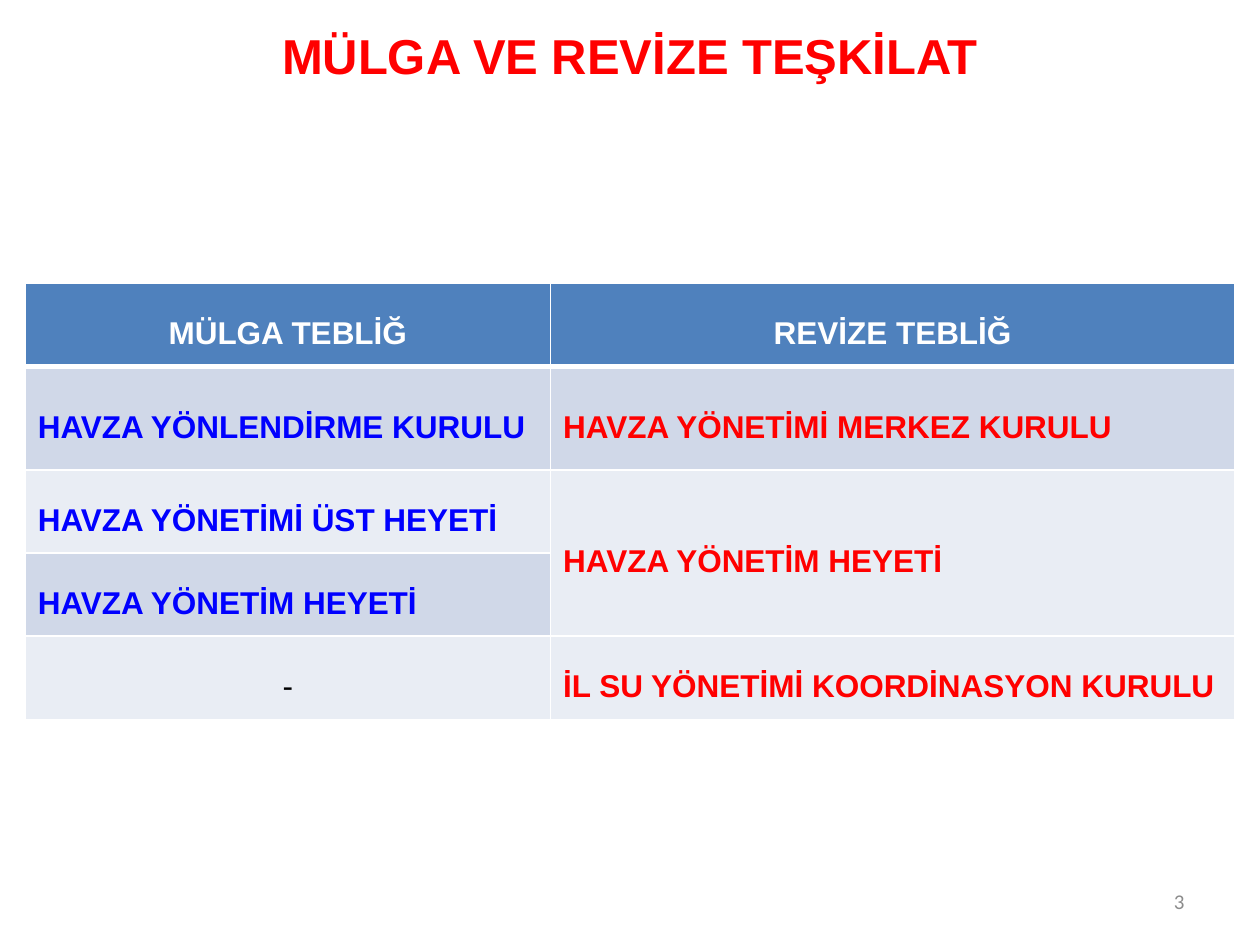
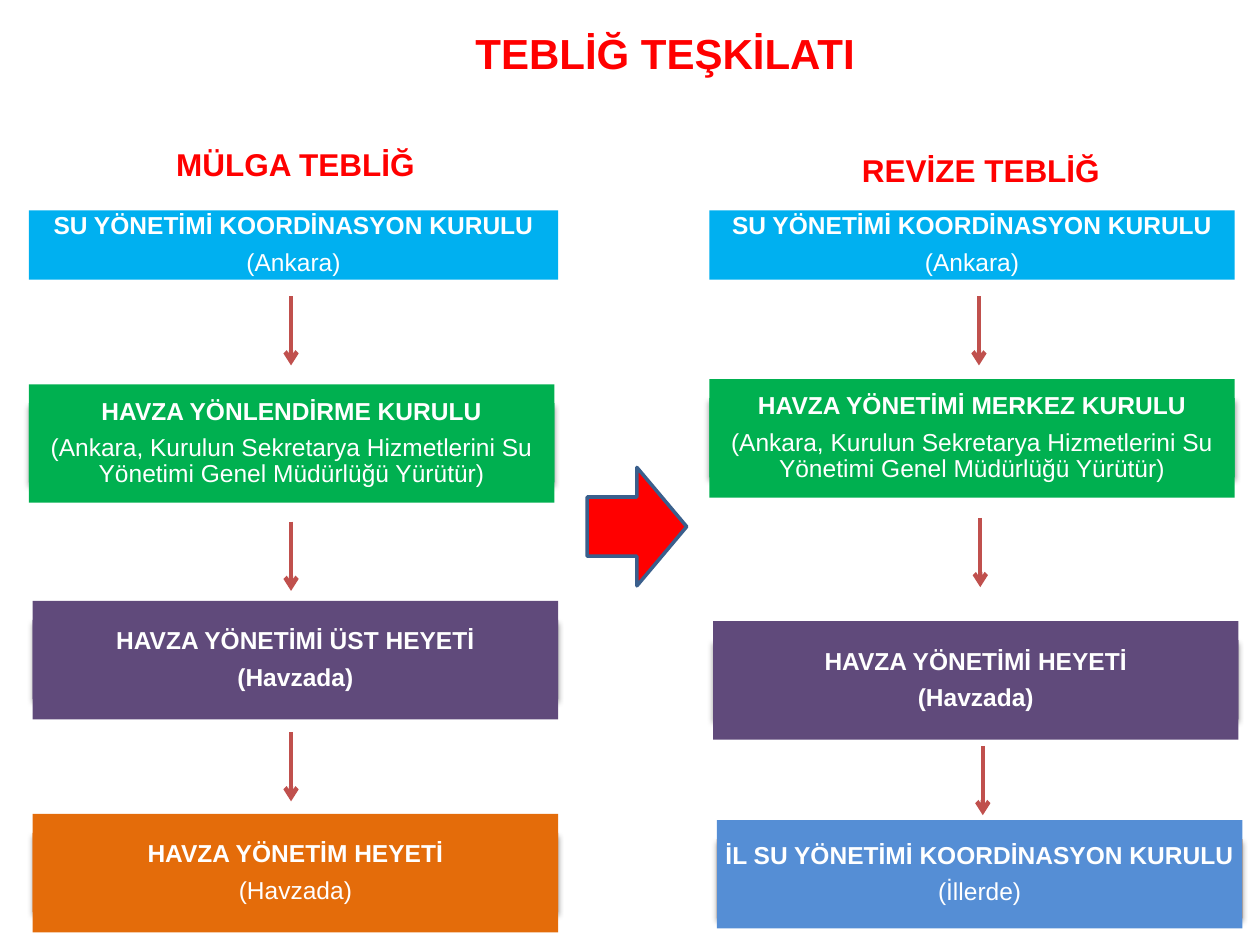
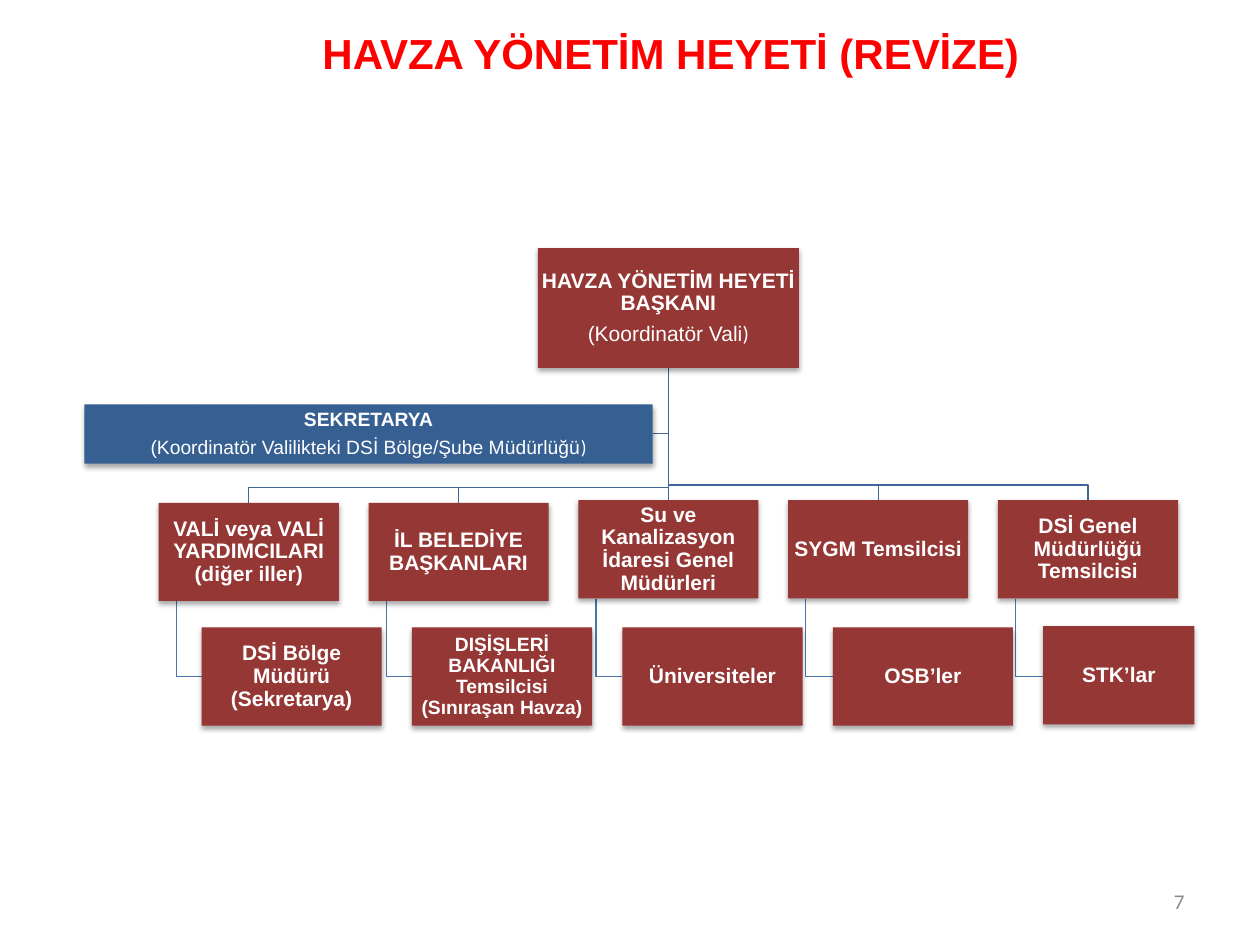
from lxml import etree
from pptx import Presentation
from pptx.dml.color import RGBColor
from pptx.enum.shapes import MSO_CONNECTOR, MSO_SHAPE
from pptx.enum.text import MSO_ANCHOR, PP_ALIGN
from pptx.oxml import parse_xml
from pptx.oxml.ns import nsdecls, qn
from pptx.util import Inches, Pt

RECT, ARROW = MSO_SHAPE.RECTANGLE, MSO_SHAPE.RIGHT_ARROW
LINE = MSO_CONNECTOR.STRAIGHT
MID = MSO_ANCHOR.MIDDLE
LEFT, CENTER, RIGHT = PP_ALIGN.LEFT, PP_ALIGN.CENTER, PP_ALIGN.RIGHT

HEX = {
    "red": "FF0000", "blue": "0000FF", "white": "FFFFFF", "black": "000000",
    "gray": "8C8C8C", "head": "4F81BD", "dark": "D0D8E8", "light": "E9EDF4",
    "sky": "00B0F0", "green": "00B050", "violet": "604A7B", "orange": "E46C0A",
    "azure": "558ED5", "rust": "C0504D", "edge": "3A5F8C", "brick": "953735",
    "navy": "376092", "trunk": "3F6797", "twig": "4875AC",
}
RGB = {name: RGBColor.from_string(code) for name, code in HEX.items()}
SHADE = (
    f'<a:effectLst {nsdecls("a")}><a:outerShdw blurRad="{Pt(3.1)}" dist="{Pt(1.8)}" '
    'dir="5400000" rotWithShape="0"><a:srgbClr val="000000"><a:alpha val="35000"/>'
    '</a:srgbClr></a:outerShdw></a:effectLst>'
)

# The grid has 10 columns and 7.5 rows, one inch each
deck = Presentation()
deck.slide_width, deck.slide_height = Inches(10), Inches(7.5)
blank = deck.slide_layouts[6]


def label(slide, at, words, size, hue="red", face="Arial", side=CENTER, wrap=True):
    frame = slide.shapes.add_textbox(*map(Inches, at)).text_frame
    frame.word_wrap, frame.vertical_anchor = wrap, MID
    para = frame.paragraphs[0]
    para.text, para.alignment = words, side
    para.font.size, para.font.name = Pt(size), face
    para.font.bold, para.font.color.rgb = hue == "red", RGB[hue]


def block(slide, at, hue, lines, size, shade=False):
    box = slide.shapes.add_shape(RECT, *map(Inches, at))
    box.fill.solid()
    box.fill.fore_color.rgb = RGB[hue]
    box.line.fill.background()
    if shade:
        box._element.spPr.append(parse_xml(SHADE))
    else:
        box.shadow.inherit = False
    frame = box.text_frame
    frame.word_wrap, frame.vertical_anchor = True, MID
    frame.margin_left = frame.margin_right = Inches(0.01)
    frame.margin_top = frame.margin_bottom = Inches(0.01)
    for i, (words, bold) in enumerate(lines):
        para = frame.add_paragraph() if i else frame.paragraphs[0]
        para.text, para.alignment = words, CENTER
        para.line_spacing, para.space_after = 0.9, Pt(round(0.4 * size, 1))
        para.font.size, para.font.name = Pt(size), "Arial"
        para.font.bold, para.font.color.rgb = bold, RGB["white"]
    return frame


# Slide 1: table of old and new bodies
old = deck.slides.add_slide(blank)
label(old, (0.97, 0, 8.06, 0.87), "MÜLGA VE REVİZE TEŞKİLAT", 28)
rows = [
    ("head", "MÜLGA TEBLİĞ", "REVİZE TEBLİĞ"),
    ("dark", "HAVZA YÖNLENDİRME KURULU", "HAVZA YÖNETİMİ MERKEZ KURULU"),
    ("light", "HAVZA YÖNETİMİ ÜST HEYETİ", "HAVZA YÖNETİM HEYETİ"),
    ("dark", "HAVZA YÖNETİM HEYETİ", ""),
    ("light", "-", "İL SU YÖNETİMİ KOORDİNASYON KURULU"),
]
grid = old.shapes.add_table(5, 2, *map(Inches, (0.2, 2.25, 9.6, 3.46))).table
for col, wide in zip(grid.columns, (4.17, 5.43)):
    col.width = Inches(wide)
for r, (fill, *texts) in enumerate(rows):
    grid.rows[r].height = Inches(0.82 if r == 1 else 0.66)
    for c, words in enumerate(texts):
        cell = grid.cell(r, c)
        props = cell._tc.get_or_add_tcPr()
        for edge in "LRTB":
            thick = 3 if (r, edge) in ((0, "B"), (1, "T")) else 1
            rule = etree.SubElement(props, qn(f"a:ln{edge}"), w=str(Pt(thick)))
            paint = etree.SubElement(rule, qn("a:solidFill"))
            etree.SubElement(paint, qn("a:srgbClr"), val=HEX["white"])
        cell.fill.solid()
        cell.fill.fore_color.rgb = RGB[fill]
        cell.vertical_anchor = MID
        if not words:
            continue
        para = cell.text_frame.paragraphs[0]
        para.text, para.line_spacing = words, 1.5
        para.alignment = CENTER if r == 0 or words == "-" else LEFT
        para.font.size, para.font.name = Pt(18), "Arial"
        para.font.bold = words != "-"
        hue = "white" if r == 0 else "black" if words == "-" else ("blue", "red")[c]
        para.font.color.rgb = RGB[hue]
grid.cell(2, 1).merge(grid.cell(3, 1))

# Slide 2: two chains of bodies side by side
flow = deck.slides.add_slide(blank)
label(flow, (3.66, 0.17, 3.24, 0.5), "TEBLİĞ TEŞKİLATI", 24, wrap=False)
label(flow, (1.29, 1.1, 2.11, 0.4), "MÜLGA TEBLİĞ", 18, wrap=False)
label(flow, (6.73, 1.15, 2.11, 0.4), "REVİZE TEBLİĞ", 18, wrap=False)
top = "SU YÖNETİMİ KOORDİNASYON KURULU"
desk = "(Ankara, Kurulun Sekretarya Hizmetlerini Su Yönetimi Genel Müdürlüğü Yürütür)"
steps = [
    (0.23, 1.67, 4.2, 0.55, "sky", top, "(Ankara)"),
    (0.23, 3.05, 4.17, 0.94, "green", "HAVZA YÖNLENDİRME KURULU", desk),
    (0.26, 4.77, 4.17, 0.94, "violet", "HAVZA YÖNETİMİ ÜST HEYETİ", "(Havzada)"),
    (0.26, 6.46, 4.17, 0.94, "orange", "HAVZA YÖNETİM HEYETİ", "(Havzada)"),
    (5.63, 1.67, 4.17, 0.55, "sky", top, "(Ankara)"),
    (5.63, 3.01, 4.17, 0.94, "green", "HAVZA YÖNETİMİ MERKEZ KURULU", desk),
    (5.66, 4.93, 4.17, 0.94, "violet", "HAVZA YÖNETİMİ HEYETİ", "(Havzada)"),
    (5.69, 6.51, 4.17, 0.86, "azure", top.replace("SU", "İL SU", 1), "(İllerde)"),
]
for x, y, w, h, hue, name, note in steps:
    if hue != "sky":
        back = "orange" if hue == "azure" else hue
        block(flow, (x, y + 0.15, w, 0.63), back, [], 14, True)
    block(flow, (x, y, w, h), hue, [(name, True), (note, hue == "violet")], 14)

for x, y in ((2.31, 2.35), (2.31, 4.14), (2.31, 5.81),
             (7.77, 2.35), (7.78, 4.11), (7.8, 5.92)):
    down = flow.shapes.add_connector(LINE, *map(Inches, (x, y, x, y + 0.55)))
    down.line.color.rgb, down.line.width = RGB["rust"], Pt(2.5)
    etree.SubElement(down.line._get_or_add_ln(), qn("a:tailEnd"), type="arrow")
    etree.SubElement(down._element.spPr, qn("a:effectLst"))

turn = flow.shapes.add_shape(ARROW, *map(Inches, (4.66, 3.71, 0.79, 0.94)))
turn.shadow.inherit = False
turn.fill.solid()
turn.fill.fore_color.rgb = RGB["red"]
turn.line.color.rgb, turn.line.width = RGB["edge"], Pt(2)

# Slide 3: chart of the board
board = deck.slides.add_slide(blank)
label(board, (1.38, -0.02, 7.89, 0.87), "HAVZA YÖNETİM HEYETİ (REVİZE)", 24)
pairs = [
    ("VALİ veya VALİ YARDIMCILARI (diğer iller)", "DSİ Bölge Müdürü (Sekretarya)"),
    ("İL BELEDİYE BAŞKANLARI", "DIŞİŞLERİ BAKANLIĞI Temsilcisi (Sınıraşan Havza)"),
    ("Su ve Kanalizasyon İdaresi Genel Müdürleri", "Üniversiteler"),
    ("SYGM Temsilcisi", "OSB’ler"),
    ("DSİ Genel Müdürlüğü Temsilcisi", "STK’lar"),
]
wide, tall = 1.43, 0.78
lefts = [1.26 + 6.66 / 4 * i for i in range(5)]
lows = [1.6 + 1.67 * i for i in range(5)]
tops = [3.99, 3.99, 3.97, 3.97, 3.97]
axis, base = lefts[2] + wide / 2, 2.92

# Lines lie behind the boxes
ways = [("trunk", [(axis, base), (axis, 3.44), (5.18, 3.44)])]
for i, (x, low, y) in enumerate(zip(lefts, lows, tops)):
    mid, stem = x + wide / 2, x + 0.14
    if i != 2:
        ways.append(("trunk", [(axis, base), (axis, y - 0.12), (mid, y - 0.12), (mid, y)]))
    ways.append(("twig", [(stem, y + tall), (stem, 5.37), (low, 5.37)]))
ways.append(("trunk", [(axis, base), (axis, tops[2])]))
for hue, spots in ways:
    spots = [(Inches(x), Inches(y)) for x, y in spots]
    if len(spots) == 2:
        path = board.shapes.add_connector(LINE, *spots[0], *spots[1])
        etree.SubElement(path._element.spPr, qn("a:effectLst"))
    else:
        pen = board.shapes.build_freeform(*spots[0])
        pen.add_line_segments(spots[1:], close=False)
        path = pen.convert_to_shape()
        path.fill.background()
        path.shadow.inherit = False
    path.line.color.rgb, path.line.width = RGB[hue], Pt(0.75)

for i, (upper, lower) in enumerate(pairs):
    block(board, (lefts[i], tops[i], wide, tall), "brick", [(upper, True)], 12, True)
    last = i == 4
    block(board, (lows[i], 4.97 if last else 4.98, 1.2 if last else wide, tall),
          "brick", [(lower, True)], 11 if i == 1 else 12, True)

chair = block(board, (4.27, 1.97, 2.07, 0.95), "brick",
              [("HAVZA YÖNETİM HEYETİ BAŞKANI", True), ("(Koordinatör Vali", False)], 12, True)
staff = block(board, (0.67, 3.21, 4.51, 0.47), "navy",
              [("SEKRETARYA", True),
               ("(Koordinatör Valilikteki DSİ Bölge/Şube Müdürlüğü", False)], 11, True)
for frame in (chair, staff):
    end = frame.paragraphs[1].add_run()
    end.text, end.font.name = ")", "Calibri"

# Page numbers
for slide, page in ((old, "3"), (board, "7")):
    label(slide, (7.17, 6.95, 2.33, 0.4), page, 12, "gray", "Calibri", RIGHT)

deck.save("out.pptx")
